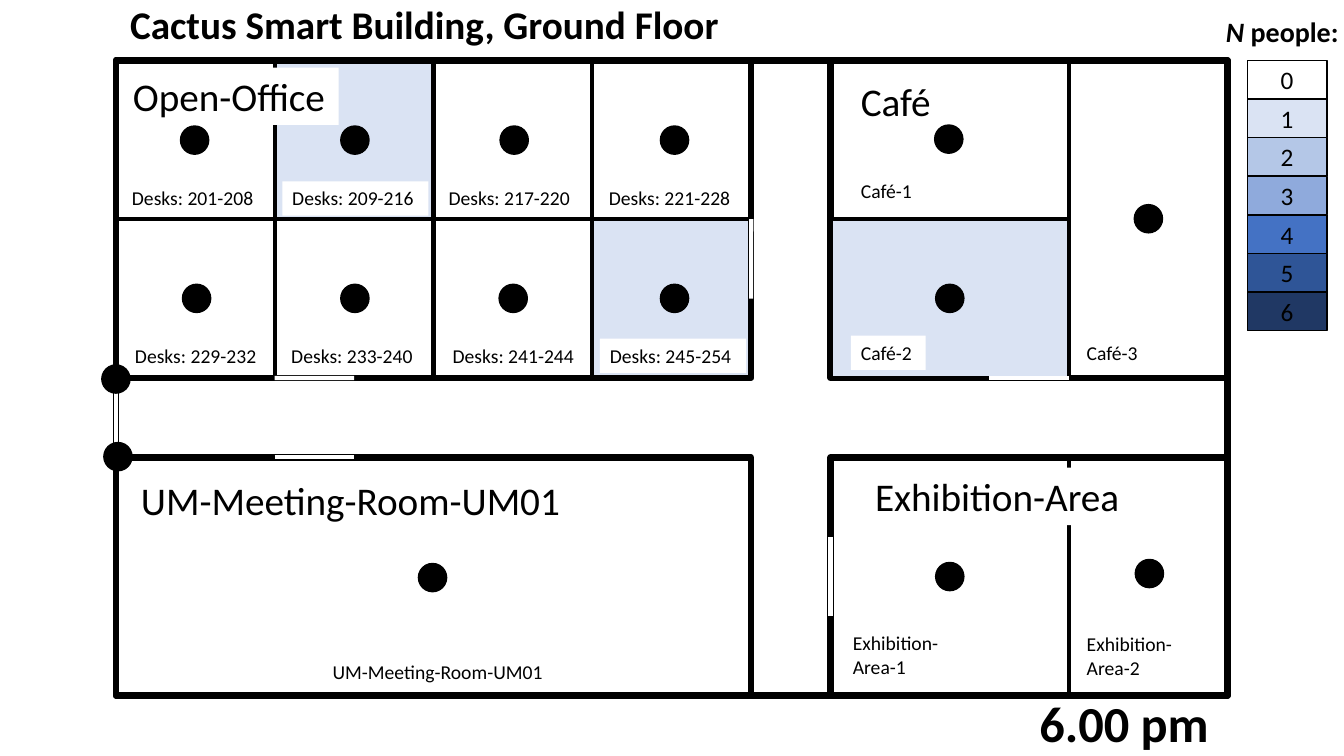
from dataclasses import dataclass
from typing import Optional

from lxml import etree
from pptx import Presentation
from pptx.dml.color import RGBColor
from pptx.enum.shapes import MSO_CONNECTOR, MSO_SHAPE
from pptx.enum.text import MSO_ANCHOR, MSO_AUTO_SIZE, PP_ALIGN
from pptx.oxml.ns import qn
from pptx.util import Inches, Pt

RECT, OVAL = MSO_SHAPE.RECTANGLE, MSO_SHAPE.OVAL
STRAIGHT = MSO_CONNECTOR.STRAIGHT
TOP, MIDDLE = MSO_ANCHOR.TOP, MSO_ANCHOR.MIDDLE
LEFT, CENTER = PP_ALIGN.LEFT, PP_ALIGN.CENTER
GROW, FIXED = MSO_AUTO_SIZE.SHAPE_TO_FIT_TEXT, MSO_AUTO_SIZE.NONE
BEGIN_LEFT, END_BOTTOM, BEGIN_RIGHT = ("begin", 1), ("end", 2), ("begin", 3)


@dataclass(frozen=True)
class Theme:
    font: str = "Calibri"
    ink: str = "000000"
    paper: str = "FFFFFF"
    scale: tuple = ("FFFFFF", "DAE3F3", "B4C7E7", "8FAADC", "4472C4", "2F5597", "203864")
    time: int = 36
    heading: int = 28
    legend_title: int = 20
    legend: int = 18
    label: int = 14
    outer_wall: float = 4.5
    inner_wall: float = 3
    outline: float = 1


THEME = Theme()

# Floor grid: every wall lies on a multiple of one module
FLOOR_LEFT, FLOOR_TOP = 1.15, 0.6
MODULE = 6.3 / 8
SENSOR = 0.28


@dataclass
class Room:
    name: str
    col: float
    row: float
    cols: float
    rows: float
    outer: bool = False
    people: Optional[int] = None


@dataclass
class Door:
    start: tuple
    end: tuple
    room: str = ""
    join: tuple = ()


@dataclass
class Label:
    text: str
    x: float
    y: float
    w: float
    h: float = 0.34


@dataclass
class Desk:
    numbers: str
    label_x: float
    sensor_x: float
    people: Optional[int] = None


DESK_ROWS = [
    [Desk("201-208", 1.21, 1.79), Desk("209-216", 2.8, 3.38, 1),
     Desk("217-220", 4.35, 4.96), Desk("221-228", 5.94, 6.55)],
    [Desk("229-232", 1.24, 1.81), Desk("233-240", 2.79, 3.38),
     Desk("241-244", 4.39, 4.95), Desk("245-254", 5.95, 6.55, 1)],
]
DESK_LABEL_Y = (1.8, 3.36)
DESK_SENSOR_Y = (1.25, 2.82)

ROOMS = [
    Room("Exhibition-Area", 9, 5, 5, 3, outer=True),
    Room("UM-Meeting-Room-UM01", 0, 5, 8, 3, outer=True),
    Room("Café", 9, 0, 5, 4, outer=True),
    Room("Café-1", 9, 0, 3, 2),
    Room("Café-3", 12, 0, 2, 4),
    *(Room(desk.numbers, 2 * i, 2 * j, 2, 2, people=desk.people)
      for j, row in enumerate(DESK_ROWS) for i, desk in enumerate(row)),
    Room("Exhibition-Area-2", 12, 5, 2, 3),
    Room("Exhibition-Area-1", 9, 5, 3, 3),
    Room("Café-2", 9, 2, 3, 2, people=1),
    Room("Building", 0, 0, 14, 8, outer=True),
    Room("Open-Office", 0, 0, 8, 4, outer=True),
]
DOORS = [
    Door((2, 5), (3, 5)),
    Door((9, 7), (9, 6)),
    Door((11, 4), (12, 4)),
    Door((8, 2), (8, 3), "Open-Office", BEGIN_RIGHT),
    Door((2, 4), (3, 4), "233-240", END_BOTTOM),
    Door((0, 4), (0, 5), "Building", BEGIN_LEFT),
]
AREA_LABELS = [
    Label("Café", 8.44, 0.72, 0.9, 0.57),
    Label("UM-Meeting-Room-UM01", 1.3, 4.68, 4.41, 0.57),
    Label("Exhibition-Area", 8.58, 4.64, 2.65, 0.57),
    Label("Open-Office", 1.22, 0.67, 2.14, 0.57),
]
ROOM_LABELS = [
    *(Label(f"Desks: {desk.numbers}", desk.label_x, y, 1.45)
      for y, row in zip(DESK_LABEL_Y, DESK_ROWS) for desk in row),
    Label("Café-1", 8.44, 1.73, 0.74),
    Label("Café-2", 8.44, 3.33, 0.74),
    Label("Café-3", 10.68, 3.33, 0.74),
    Label("Exhibition-Area-2", 10.68, 6.22, 1.39, 0.57),
    Label("Exhibition-Area-1", 8.36, 6.21, 1.39, 0.57),
    Label("UM-Meeting-Room-UM01", 3.2, 6.5, 2.3),
]
SENSORS = [
    *((desk.sensor_x, y) for y, row in zip(DESK_SENSOR_Y, DESK_ROWS) for desk in row),
    (9.28, 2.82), (9.27, 1.24), (11.25, 2.03), (9.28, 5.58), (11.26, 5.55),
    (4.15, 5.59), (1.01, 3.62), (1.03, 4.39),
]


def grid(col: float, row: float) -> tuple:
    return Inches(FLOOR_LEFT + col * MODULE), Inches(FLOOR_TOP + row * MODULE)


def paint(sp, fill: Optional[str]) -> None:
    if fill is None:
        sp.fill.background()
    else:
        sp.fill.solid()
        sp.fill.fore_color.rgb = RGBColor.from_string(fill)


def write(sp, runs: list, size: int, wrap: bool = True, anchor=TOP, align=LEFT, fit=GROW) -> None:
    tf = sp.text_frame
    for name, value in dict(word_wrap=wrap, auto_size=fit, vertical_anchor=anchor).items():
        setattr(tf, name, value)
    p = tf.paragraphs[0]
    p.alignment = align
    for text, style in runs:
        r = p.add_run()
        r.text = text
        for name, value in dict(name=THEME.font, size=Pt(size), **style).items():
            setattr(r.font, name, value)
        r.font.color.rgb = RGBColor.from_string(THEME.ink)


def add_box(slide, kind, box: tuple, fill: Optional[str], weight: float):
    sp = slide.shapes.add_shape(kind, *box)
    sp.shadow.inherit = False
    paint(sp, fill)
    sp.line.color.rgb = RGBColor.from_string(THEME.ink)
    sp.line.width = Pt(weight)
    return sp


def add_room(slide, room: Room):
    box = (*grid(room.col, room.row), Inches(room.cols * MODULE), Inches(room.rows * MODULE))
    fill = None if room.people is None else THEME.scale[room.people]
    return add_box(slide, RECT, box, fill, THEME.outer_wall if room.outer else THEME.inner_wall)


def add_door(slide, door: Door, rooms: dict) -> None:
    line = slide.shapes.add_connector(STRAIGHT, *grid(*door.start), *grid(*door.end))
    line.line.color.rgb = RGBColor.from_string(THEME.paper)
    line.line.width = Pt(THEME.inner_wall)
    etree.SubElement(line._element.spPr, qn("a:effectLst"))
    if door.room:
        end, side = door.join
        connect = line.begin_connect if end == "begin" else line.end_connect
        connect(rooms[door.room], side)


def add_label(slide, label: Label, size: int, wrap: bool = True,
              runs: Optional[list] = None, fill: Optional[str] = THEME.paper) -> None:
    sp = slide.shapes.add_textbox(*map(Inches, (label.x, label.y, label.w, label.h)))
    paint(sp, fill)
    write(sp, runs or [(label.text, {})], size, wrap)


def add_legend(slide) -> None:
    x, y, w, h = 12.37, 0.6, 0.79, 2.68 / len(THEME.scale)
    for people, color in enumerate(THEME.scale):
        box = tuple(map(Inches, (x, y + people * h, w, h)))
        sp = add_box(slide, RECT, box, color, THEME.outline)
        write(sp, [(str(people), {})], THEME.legend, anchor=MIDDLE, align=CENTER, fit=FIXED)
    add_label(slide, Label("", 12.06, 0.09, 1.33, 0.44), THEME.legend_title, False,
              [("N", dict(bold=True, italic=True)), (" people:", dict(bold=True))], None)


def main() -> None:
    prs = Presentation()
    prs.slide_width, prs.slide_height = Inches(13.33), Inches(7.5)
    slide = prs.slides.add_slide(prs.slide_layouts[5])

    # Title
    title = slide.shapes.title
    for name, value in dict(left=1.19, top=-0.05, width=6.07, height=0.57).items():
        setattr(title, name, Inches(value))
    paint(title, THEME.paper)
    write(title, [("Cactus Smart Building, Ground Floor", dict(bold=True))], THEME.heading, False)

    # Floor plan
    rooms = {room.name: add_room(slide, room) for room in ROOMS}
    for door in DOORS:
        add_door(slide, door, rooms)
    for label in AREA_LABELS:
        add_label(slide, label, THEME.heading, wrap=False)
    for label in ROOM_LABELS:
        add_label(slide, label, THEME.label)
    for x, y in SENSORS:
        add_box(slide, OVAL, tuple(map(Inches, (x, y, SENSOR, SENSOR))), THEME.ink, THEME.outline)

    # Legend and time
    add_legend(slide)
    add_label(slide, Label("", 10.21, 6.82, 3.01, 0.71), THEME.time,
              runs=[("6.00 pm", dict(bold=True))], fill=None)
    prs.save("out.pptx")


if __name__ == "__main__":
    main()
